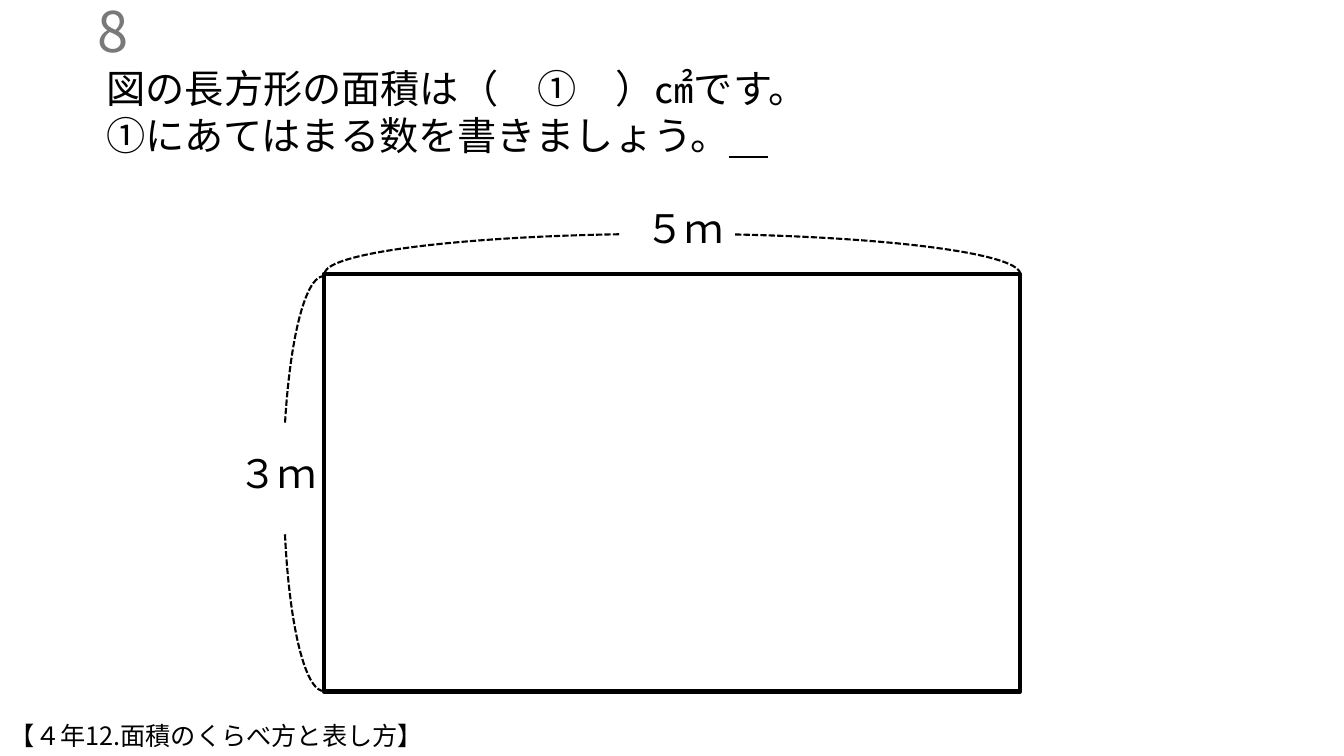
from dataclasses import dataclass

from lxml.etree import SubElement
from pptx import Presentation
from pptx.dml.color import RGBColor
from pptx.enum.dml import MSO_LINE
from pptx.enum.shapes import MSO_SHAPE
from pptx.enum.text import MSO_ANCHOR, PP_ALIGN
from pptx.oxml.ns import qn
from pptx.util import Inches, Pt


@dataclass(frozen=True)
class Theme:
    font: str = "Noto Sans CJK JP"
    ink: RGBColor = RGBColor(0x00, 0x00, 0x00)
    gray: RGBColor = RGBColor(0x79, 0x79, 0x79)
    number: int = 40
    body: int = 28
    note: int = 18


theme = Theme()
deck = Presentation()
deck.slide_width, deck.slide_height = Inches(13.33), Inches(7.5)
slide = deck.slides.add_slide(deck.slide_layouts[6])


def add_text(box, lines, size, color=theme.ink):
    frame = slide.shapes.add_textbox(*map(Inches, box)).text_frame
    frame.word_wrap = True
    for i, line in enumerate(lines):
        para = frame.add_paragraph() if i else frame.paragraphs[0]
        para.add_run().text = line
        font = para.font
        font.size, font.name = Pt(size), theme.font
        font.color.rgb = color
        # East Asian glyphs take their own typeface entry
        props = para._p.pPr.find(qn("a:defRPr"))
        SubElement(props, qn("a:ea"), typeface=theme.font)
    return frame


def add_outline(kind, box, width):
    shape = slide.shapes.add_shape(kind, *map(Inches, box))
    shape.shadow.inherit = False
    shape.fill.background()
    shape.line.color.rgb = theme.ink
    shape.line.width = Pt(width)
    return shape


# Rectangle to be measured
add_outline(MSO_SHAPE.RECTANGLE, (3.21, 2.72, 6.91, 4.14), 3)

# Each dimension brace is two dashed arcs, the second one mirrored
arcs = [
    ((3.21, 2.32, 6.91, 0.8), 0, False),
    ((3.22, 2.32, 6.83, 0.79), 0, True),
    ((1.15, 4.4, 4.12, 0.8), 270, False),
    ((1.17, 4.42, 4.08, 0.79), 270, True),
]
for box, turn, mirror in arcs:
    arc = add_outline(MSO_SHAPE.ARC, box, 1.5)
    arc.line.dash_style = MSO_LINE.SQUARE_DOT
    arc.adjustments[0] = 193 if mirror else 196.71
    arc.adjustments[1] = 0
    arc.rotation = turn
    if mirror:
        arc._element.spPr.xfrm.set("flipH", "1")

add_text((6.3, 1.98, 1.18, 0.57), ["５ｍ"], theme.body)
add_text((2.27, 4.41, 1.9, 0.57), ["３ｍ"], theme.body)

number = add_text((0.37, 0.1, 1, 0.4), ["8"], theme.number, theme.gray)
number.vertical_anchor = MSO_ANCHOR.MIDDLE
number.paragraphs[0].alignment = PP_ALIGN.RIGHT

task = add_text(
    (0.96, 0.59, 11.71, 1.04),
    ["図の長方形の面積は（　①　）㎠です。", "①にあてはまる数を書きましょう。"],
    theme.body,
)
blank = task.paragraphs[1].add_run()
blank.text = "　"
blank.font.underline = True

add_text((0, 7.1, 7.49, 0.4), ["【４年12.面積のくらべ方と表し方】"], theme.note)

deck.save("out.pptx")
